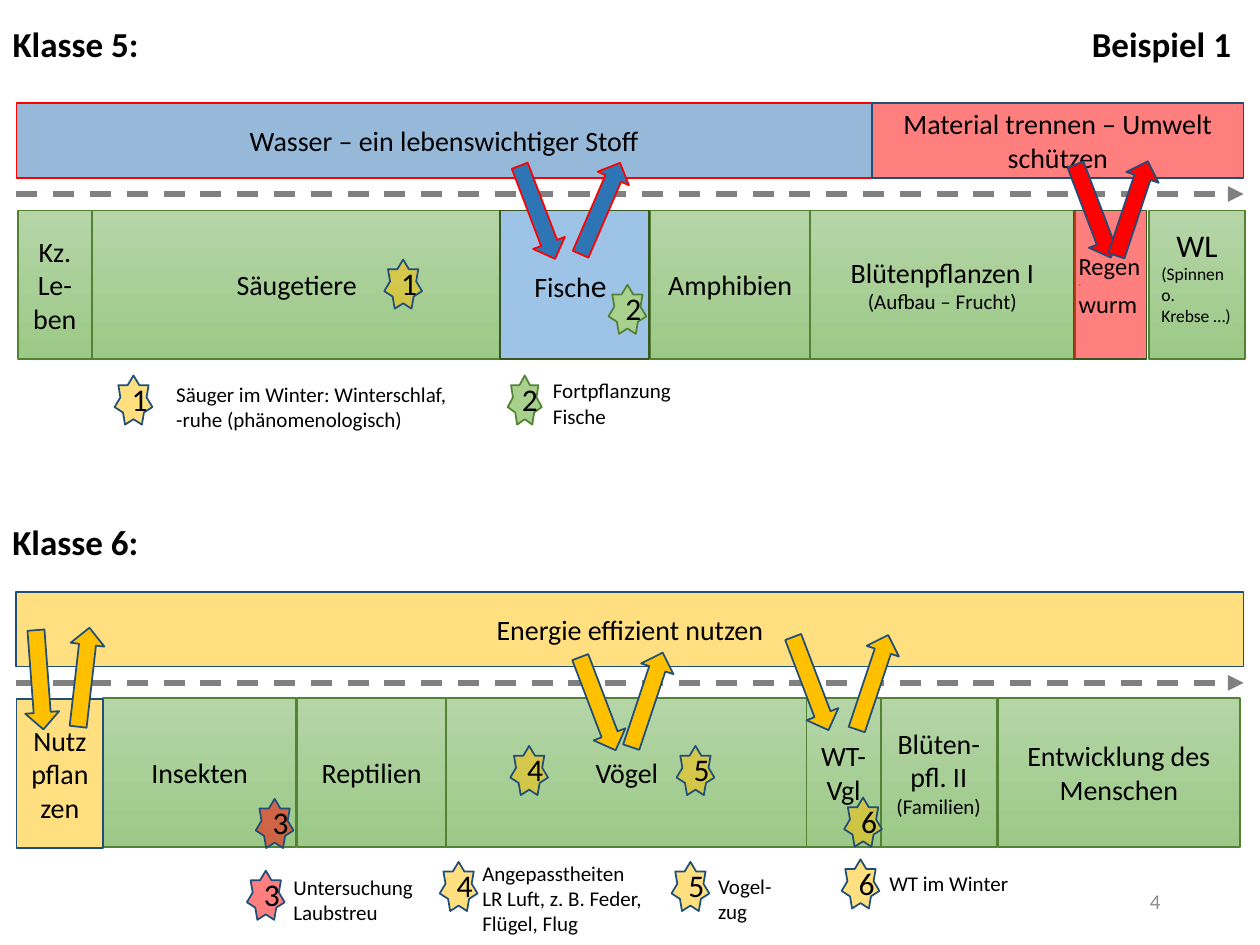
import pptx
import pptx.util
import pptx.dml.color
import pptx.enum.dml
import pptx.enum.shapes
import pptx.enum.text
import pptx.oxml
import pptx.oxml.ns
from dataclasses import dataclass

Inches = pptx.util.Inches
Pt = pptx.util.Pt
SHAPE = pptx.enum.shapes.MSO_SHAPE
ALIGN = pptx.enum.text.PP_ALIGN
ANCHOR = pptx.enum.text.MSO_ANCHOR
LEFT, MID, RIGHT = ALIGN.LEFT, ALIGN.CENTER, ALIGN.RIGHT


@dataclass(frozen=True)
class Theme:
    font: str = "Calibri"
    head: int = 20
    mark: int = 18
    body: int = 16
    mid: int = 14
    small: int = 12
    note: int = 10
    tiny: int = 4
    ink: str = "000000"
    grey: str = "808080"
    pale: str = "8C8C8C"
    blue: str = "2E75B6"
    sky: str = "9DC3E6"
    navy: str = "1F4E79"
    red: str = "FF0000"
    gold: str = "FFC000"
    leaf: str = "A9D18E"
    moss: str = "548235"
    dark: str = "385723"
    fade: tuple = ("B5D5A7", "9CC987")


def rgb(code):
    return pptx.dml.color.RGBColor.from_string(code)


def apply(item, values):
    for name, value in values.items():
        setattr(item, name, value)


def tag(name, attrs):
    space = pptx.oxml.ns.nsdecls("a")
    return pptx.oxml.parse_xml(f"<a:{name} {space} {attrs}/>")


class Board:
    """Holds the theme and the slide, and draws each kind of part."""

    def __init__(self, theme, slide):
        self.theme = theme
        self.slide = slide

    def letter(self, shape, paras, align=MID, anchor=ANCHOR.MIDDLE,
               color=None, bold=False, frame=None):
        """Each paragraph is a list of (text, size) runs."""
        box = shape.text_frame
        apply(box, {"word_wrap": True, "vertical_anchor": anchor,
                    "auto_size": pptx.enum.text.MSO_AUTO_SIZE.NONE})
        apply(box, frame or {})
        sides = align if isinstance(align, list) else [align] * len(paras)
        for i, (runs, side) in enumerate(zip(paras, sides)):
            para = box.add_paragraph() if i else box.paragraphs[0]
            para.alignment = side
            for text, size in runs:
                run = para.add_run()
                run.text = text
                apply(run.font, {"name": self.theme.font, "size": Pt(size),
                                 "bold": bold})
                run.font.color.rgb = rgb(color or self.theme.ink)

    def shape(self, kind, at, fill, line, clear=False, home=None):
        shapes = (home or self.slide).shapes
        item = shapes.add_shape(kind, *map(Inches, at))
        item.shadow.inherit = False
        if isinstance(fill, tuple):
            item.fill.gradient()
            item.fill.gradient_angle = 270
            for stop, code in zip(item.fill.gradient_stops, fill):
                stop.color.rgb = rgb(code)
        else:
            item.fill.solid()
            item.fill.fore_color.rgb = rgb(fill)
        if clear:
            tint = item._element.spPr.find(".//" + pptx.oxml.ns.qn("a:srgbClr"))
            tint.append(tag("alpha", 'val="50000"'))
        item.line.color.rgb = rgb(line)
        item.line.width = Pt(1)
        return item

    def block(self, at, paras, fill=None, line=None, clear=False, **form):
        item = self.shape(SHAPE.RECTANGLE, at, fill or self.theme.fade,
                          line or self.theme.moss, clear)
        self.letter(item, paras, **form)

    def star(self, left, top, label, fill, line=None, home=None, width=0.3):
        line = line or self.theme.navy
        item = self.shape(SHAPE.STAR_7_POINT, (left, top, width, 0.39), fill,
                          line, clear=line == self.theme.navy, home=home)
        self.letter(item, [[(label, self.theme.mark)]])

    def text(self, at, paras, home=None, align=LEFT, anchor=ANCHOR.TOP, **form):
        item = (home or self.slide).shapes.add_textbox(*map(Inches, at))
        self.letter(item, paras, align=align, anchor=anchor, **form)

    def legend(self, star, at, lines, **form):
        home = self.slide.shapes.add_group_shape()
        self.star(**star, home=home)
        self.text(at, [[(line, self.theme.small)] for line in lines], home, **form)

    def arrow(self, left, top, turn, fill, line):
        item = self.shape(SHAPE.RIGHT_ARROW, (left, top, 0.79, 0.27), fill, line)
        item.rotation = turn

    def time(self, top):
        item = self.slide.shapes.add_connector(
            pptx.enum.shapes.MSO_CONNECTOR.STRAIGHT,
            *map(Inches, (0.13, top, 9.87, top)))
        item.line.color.rgb = rgb(self.theme.grey)
        apply(item.line, {"width": Pt(3),
                          "dash_style": pptx.enum.dml.MSO_LINE.DASH})
        props = item._element.spPr
        props.find(pptx.oxml.ns.qn("a:ln")).append(tag("tailEnd", 'type="triangle"'))
        props.append(tag("effectLst", ""))

    def title(self, at, text):
        item = self.slide.shapes.title
        apply(item, dict(zip(("left", "top", "width", "height"), map(Inches, at))))
        self.letter(item, [[(text, self.theme.head)]], LEFT, ANCHOR.TOP, bold=True)


def main():
    deck = pptx.Presentation()
    apply(deck, {"slide_width": Inches(10), "slide_height": Inches(7.5)})
    t = Theme()
    board = Board(t, deck.slides.add_slide(deck.slide_layouts[5]))
    high = 1.18

    # Headings
    board.title((0, 0.13, 1.4, 0.44), "Klasse 5:")
    board.text((0, 4.08, 1.4, 0.44), [[("Klasse 6:", t.head)]], bold=True)
    board.text((8.53, 0.13, 1.34, 0.44), [[("Beispiel 1", t.head)]],
               align=RIGHT, bold=True)

    # Topic bars and time lines
    for left, top, width, text, fill, line in (
            (0.13, 0.82, 6.79, "Wasser – ein lebenswichtiger Stoff", t.blue, t.red),
            (6.92, 0.82, 2.95, "Material trennen – Umwelt schützen", t.red, t.navy),
            (0.13, 4.7, 9.74, "Energie effizient nutzen", t.gold, t.navy)):
        board.block((left, top, width, 0.59), [[(text, t.body)]], fill, line, True)
    for top in (1.54, 5.42):
        board.time(top)

    # Green blocks: left, top, width, main line, small line
    for left, top, width, text, *note in (
            (0.14, 1.67, 0.59, "Kz. Le-ben"),
            (0.73, 1.67, 3.25, "Säugetiere"),
            (5.16, 1.67, 1.27, "Amphibien"),
            (6.43, 1.67, 2.1, "Blütenpflanzen I", "(Aufbau – Frucht)"),
            (0.82, 5.54, 1.53, "Insekten"),
            (2.36, 5.54, 1.18, "Reptilien"),
            (3.54, 5.54, 2.87, "Vögel"),
            (6.4, 5.54, 0.59, "WT-Vgl"),
            (7.92, 5.54, 1.92, "Entwicklung des Menschen"),
            (6.99, 5.54, 0.92, "Blüten-pfl. II", "(Familien)")):
        paras = [[(text, t.body)]] + [[(line, t.small)] for line in note]
        board.block((left, top, width, high), paras)

    # Blocks with a form of their own
    board.block((3.97, 1.67, 1.18, high), [[("Fisch", t.body), ("e", t.mark)]],
                t.sky, t.dark, align=LEFT, frame={"margin_left": Inches(0.27)})
    board.block((8.52, 1.67, 0.58, high),
                [[("Regen", t.mid), ("-", t.tiny)], [("wurm", t.mid)]],
                t.red, t.dark, True, align=LEFT,
                frame={"margin_left": Inches(0.04), "margin_right": Inches(0.04)})
    board.block((9.12, 1.67, 0.76, high),
                [[("WL", t.mark)], [("(Spinnen o.", t.note)], [("Krebse …)", t.note)]],
                align=[MID, LEFT, LEFT], anchor=ANCHOR.TOP,
                frame={"margin_top": Inches(0.12)})
    board.block((0.13, 5.55, 0.69, high), [[("Nutzpflanzen", t.body)]],
                t.gold, t.navy, True)

    # Numbered stars on the blocks
    for left, top, label, fill, line in (
            (3.05, 2.06, "1", t.gold, t.navy),
            (4.83, 2.26, "2", t.leaf, t.moss),
            (2.03, 6.34, "3", t.red, t.navy),
            (4.05, 5.92, "4", t.gold, t.navy),
            (5.37, 5.92, "5", t.gold, t.navy),
            (6.7, 6.33, "6", t.gold, t.navy)):
        board.star(left, top, label, fill, line)

    # Legend: star place, number and fill, then text
    for left, top, label, fill, at, lines, star, form in (
            (0.91, 2.98, "1", t.gold, (1.3, 2.98, 2.43, 0.5),
             ["Säuger im Winter: Winterschlaf, -ruhe (phänomenologisch)"], {}, {}),
            (4.03, 2.98, "2", t.leaf, (4.29, 2.95, 1.5, 0.5),
             ["Fortpflanzung", "Fische"], {"line": t.moss, "width": 0.27}, {}),
            (1.96, 6.91, "3", t.red, (2.23, 6.89, 1.39, 0.5),
             ["Untersuchung Laubstreu"], {}, {"anchor": ANCHOR.MIDDLE}),
            (3.49, 6.84, "4", t.gold, (3.73, 6.78, 1.47, 0.71),
             ["Angepasstheiten LR Luft, z. B. Feder, Flügel, Flug"], {}, {}),
            (5.33, 6.84, "5", t.gold, (5.6, 6.88, 0.65, 0.5), ["Vogel-zug"], {}, {}),
            (6.68, 6.82, "6", t.gold, (6.96, 6.86, 1.59, 0.3),
             ["WT im Winter"], {}, {})):
        spot = {"left": left, "top": top, "label": label, "fill": fill}
        board.legend({**spot, **star}, at, lines, **form)

    # Arrows between bars and blocks
    for left, top, turn, fill, line in (
            (3.87, 1.55, 69.2, t.blue, t.red),
            (4.37, 1.52, 293.3, t.blue, t.red),
            (8.28, 1.54, 69.2, t.red, t.navy),
            (8.59, 1.52, 288.4, t.red, t.navy),
            (4.35, 5.45, 69.2, t.gold, t.navy),
            (4.74, 5.42, 288.4, t.gold, t.navy),
            (6.04, 5.29, 69.2, t.gold, t.navy),
            (6.53, 5.28, 288.4, t.gold, t.navy),
            (-0.08, 5.26, 85.7, t.gold, t.navy),
            (0.27, 5.24, 276.5, t.gold, t.navy)):
        board.arrow(left, top, turn, fill, line)

    # Page number
    board.text((7.06, 6.95, 2.25, 0.4), [[("4", t.small)]], align=RIGHT,
               anchor=ANCHOR.MIDDLE, color=t.pale)
    deck.save("out.pptx")


if __name__ == "__main__":
    main()
